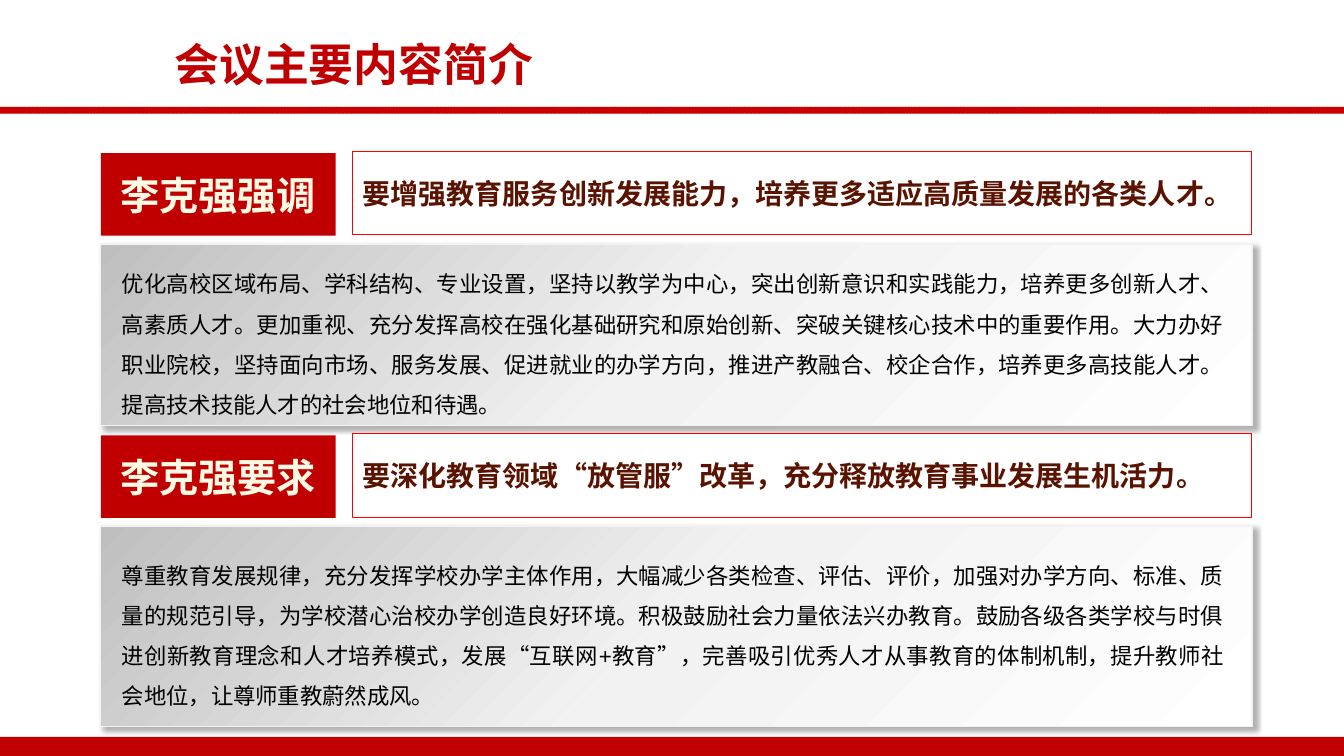
from dataclasses import dataclass

from lxml import etree
from pptx import Presentation
from pptx.dml.color import RGBColor
from pptx.enum.dml import MSO_PATTERN
from pptx.enum.lang import MSO_LANGUAGE_ID as Lang
from pptx.enum.shapes import MSO_SHAPE as Shape
from pptx.enum.text import MSO_ANCHOR as Anchor, PP_ALIGN as Align
from pptx.oxml import parse_xml
from pptx.oxml.ns import nsdecls, qn
from pptx.util import Pt

HEADING_FONT = "Noto Sans CJK SC"
BODY_FONT = "Arial"
RED = "C00000"
SECTION_PITCH = 201.6


@dataclass(frozen=True)
class Box:
    left: float
    top: float
    width: float
    height: float

    def lengths(self) -> tuple:
        return Pt(self.left), Pt(self.top), Pt(self.width), Pt(self.height)


@dataclass(frozen=True)
class Style:
    size: float
    color: str
    font: str = HEADING_FONT
    bold: bool = True
    align: Align = Align.LEFT
    spacing: float = 1.0


@dataclass(frozen=True)
class Section:
    label: str
    headline: str
    detail: str
    panel_height: float
    detail_top: float
    detail_height: float


TITLE = Style(32, RED)
LABEL = Style(28, "FFFAE3", align=Align.CENTER)
HEADLINE = Style(20, "591300")
DETAIL = Style(16, "000000", BODY_FONT, False, Align.JUSTIFY, 1.5)

SECTIONS = [
    Section(
        "李克强强调",
        "要增强教育服务创新发展能力，培养更多适应高质量发展的各类人才。",
        "优化高校区域布局、学科结构、专业设置，坚持以教学为中心，突出创新意识和实践能力，"
        "培养更多创新人才、高素质人才。更加重视、充分发挥高校在强化基础研究和原始创新、"
        "突破关键核心技术中的重要作用。大力办好职业院校，坚持面向市场、服务发展、"
        "促进就业的办学方向，推进产教融合、校企合作，培养更多高技能人才。"
        "提高技术技能人才的社会地位和待遇。",
        129.6, 180, 123.8,
    ),
    Section(
        "李克强要求",
        "要深化教育领域“放管服”改革，充分释放教育事业发展生机活力。",
        "尊重教育发展规律，充分发挥学校办学主体作用，大幅减少各类检查、评估、评价，"
        "加强对办学方向、标准、质量的规范引导，为学校潜心治校办学创造良好环境。"
        "积极鼓励社会力量依法兴办教育。鼓励各级各类学校与时俱进创新教育理念和人才培养模式，"
        "发展“互联网+教育”，完善吸引优秀人才从事教育的体制机制，提升教师社会地位，"
        "让尊师重教蔚然成风。",
        143.3, 388.1, 120.2,
    ),
]


def rgb(color: str) -> RGBColor:
    return RGBColor.from_string(color)


def write(frame, text: str, style: Style, anchor: Anchor = Anchor.TOP) -> None:
    frame.word_wrap = True
    frame.vertical_anchor = anchor
    paragraph = frame.paragraphs[0]
    paragraph.alignment = style.align
    paragraph.line_spacing = style.spacing
    paragraph.space_before = Pt(0)
    run = paragraph.add_run()
    run.text = text
    font = run.font
    font.size, font.bold, font.name = Pt(style.size), style.bold, style.font
    font.color.rgb = rgb(style.color)
    font.language_id = Lang.SIMPLIFIED_CHINESE
    east_asian = etree.SubElement(run._r.get_or_add_rPr(), qn("a:ea"))
    east_asian.set("typeface", HEADING_FONT)


def add_block(slide, box: Box, kind: Shape = Shape.RECTANGLE, fill: str = "", line: str = "",
              line_width: float = 0.75):
    block = slide.shapes.add_shape(kind, *box.lengths())
    block.shadow.inherit = False
    if kind == Shape.ROUNDED_RECTANGLE:
        block.adjustments[0] = 0
    if fill:
        block.fill.solid()
        block.fill.fore_color.rgb = rgb(fill)
    else:
        block.fill.background()
    if line:
        block.line.color.rgb = rgb(line)
        block.line.width = Pt(line_width)
    else:
        block.line.fill.background()
    return block


def shade_panel(panel) -> None:
    """Give a panel its diagonal gradient and soft shadow."""
    stops = "".join(
        f'<a:gs pos="{percent * 1000}"><a:srgbClr val="{color}"/></a:gs>'
        for percent, color in [(0, "BFBFBF"), (50, "F2F2F2"), (100, "FFFFFF")]
    )
    gradient = parse_xml(
        f'<a:gradFill {nsdecls("a")} rotWithShape="1"><a:gsLst>{stops}</a:gsLst>'
        '<a:lin ang="2700000" scaled="0"/></a:gradFill>'
    )
    shadow = parse_xml(
        f'<a:outerShdw {nsdecls("a")} blurRad="{Pt(4)}" dist="{Pt(3)}" dir="2700000" '
        'algn="tl" rotWithShape="0"><a:srgbClr val="000000"><a:alpha val="30000"/>'
        "</a:srgbClr></a:outerShdw>"
    )
    properties = panel._element.spPr
    properties.replace(properties.find(qn("a:noFill")), gradient)
    properties.find(qn("a:effectLst")).append(shadow)


def add_section(slide, section: Section, offset: float) -> None:
    label = add_block(slide, Box(72, 109.4 + offset, 167.8, 59), Shape.ROUNDED_RECTANGLE, RED)
    write(label.text_frame, section.label, LABEL, Anchor.MIDDLE)

    headline = add_block(slide, Box(252, 108 + offset, 642.2, 59.8), Shape.ROUNDED_RECTANGLE,
                         line="FF0000")
    write(headline.text_frame, section.headline, HEADLINE, Anchor.MIDDLE)

    panel = add_block(slide, Box(72, 174.2 + offset, 822.2, section.panel_height),
                      line="F2F2F2", line_width=1)
    shade_panel(panel)

    detail_box = Box(79.9, section.detail_top, 802.1, section.detail_height)
    detail = slide.shapes.add_textbox(*detail_box.lengths())
    write(detail.text_frame, section.detail, DETAIL)


def main() -> None:
    deck = Presentation()
    deck.slide_width, deck.slide_height = Pt(960), Pt(540)
    slide = deck.slides.add_slide(deck.slide_layouts[5])

    # Frame bars
    add_block(slide, Box(0, 526.3, 960, 13.7), fill=RED)
    rule = add_block(slide, Box(0, 76.3, 960, 5))
    rule.fill.patterned()
    rule.fill.pattern = MSO_PATTERN.DARK_UPWARD_DIAGONAL
    rule.fill.fore_color.rgb = rgb("FF0000")
    rule.fill.back_color.rgb = rgb(RED)

    # Title
    title = slide.shapes.title
    title.left, title.top, title.width, title.height = Box(117.4, 22.3, 487.4, 46.1).lengths()
    write(title.text_frame, "会议主要内容简介", TITLE)

    # Sections
    for index, section in enumerate(SECTIONS):
        add_section(slide, section, index * SECTION_PITCH)

    deck.save("out.pptx")


if __name__ == "__main__":
    main()
